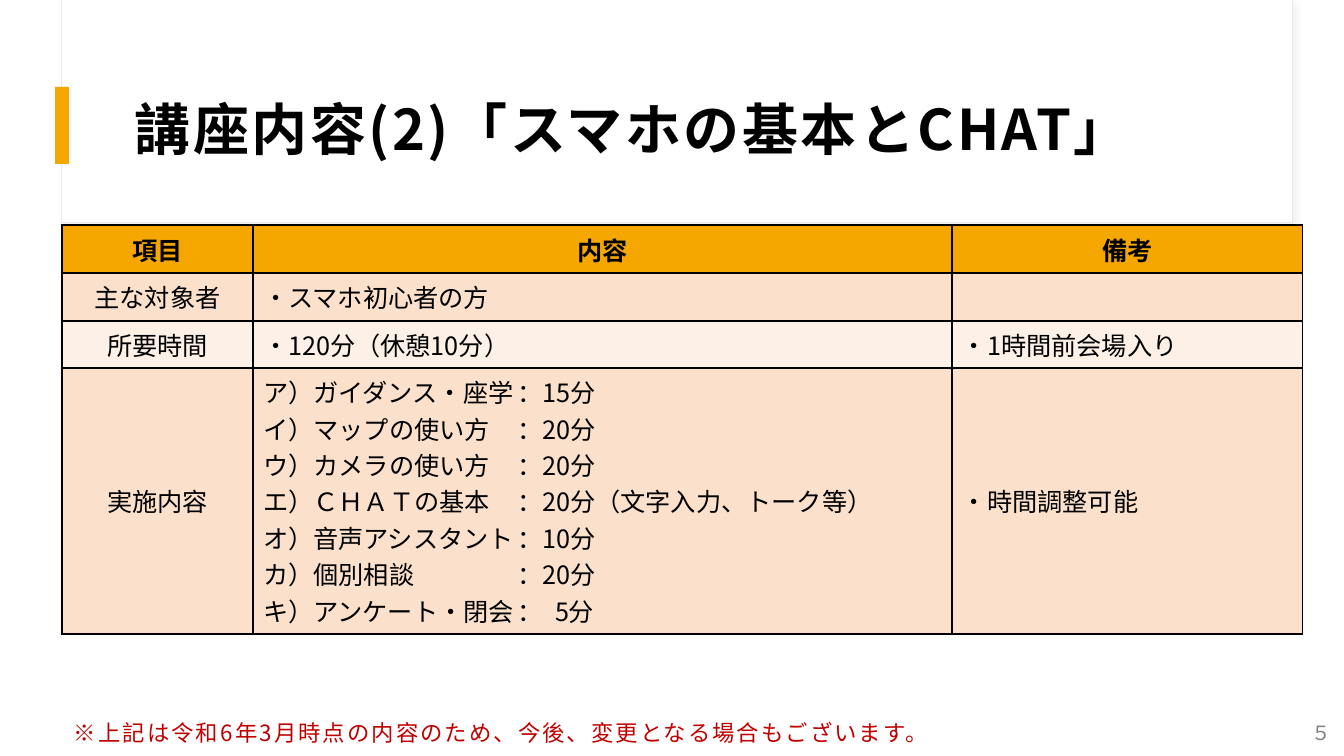
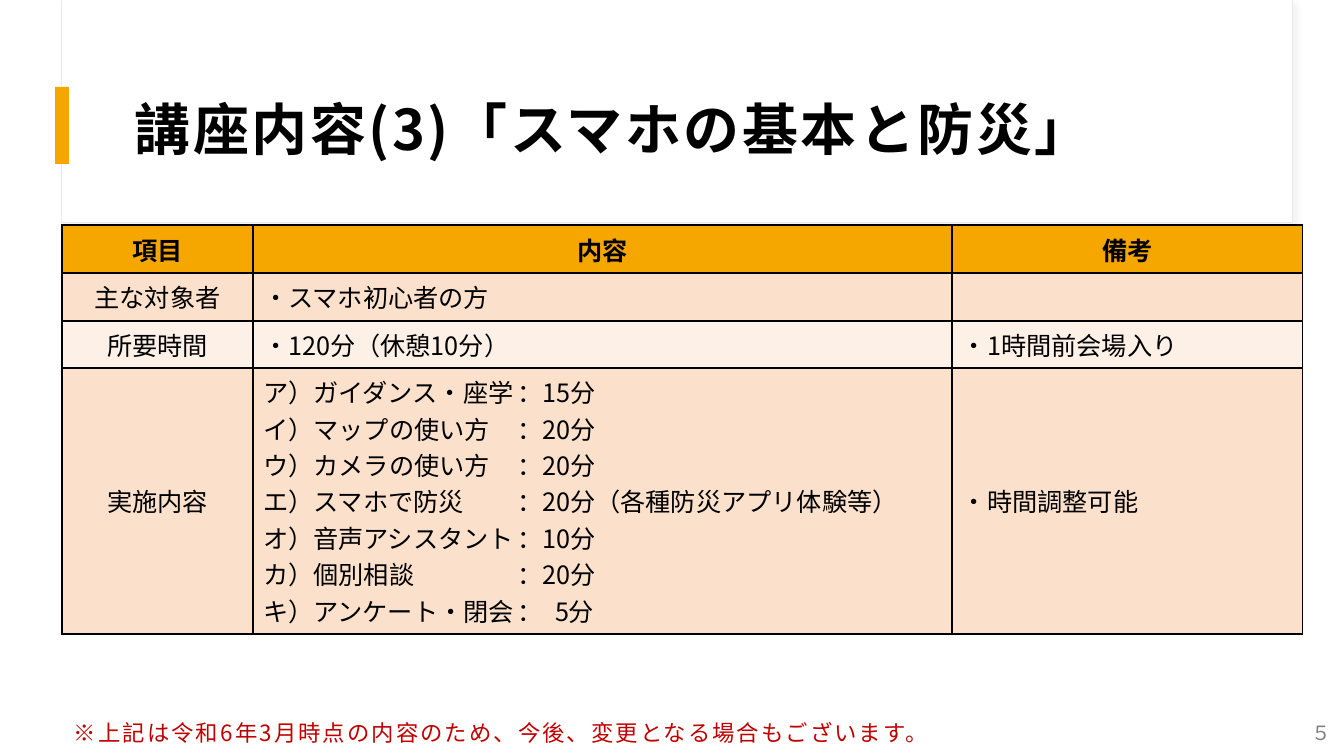
"""Build two course outline slides with a shared title band, table and footer."""
from lxml import etree
from pptx import Presentation
from pptx.dml.color import RGBColor
from pptx.enum.shapes import MSO_SHAPE
from pptx.enum.text import MSO_ANCHOR, PP_ALIGN
from pptx.oxml.ns import qn
from pptx.util import Emu, Pt

RECTANGLE = MSO_SHAPE.RECTANGLE
LEFT, CENTER, RIGHT = PP_ALIGN.LEFT, PP_ALIGN.CENTER, PP_ALIGN.RIGHT
MIDDLE, BOTTOM = MSO_ANCHOR.MIDDLE, MSO_ANCHOR.BOTTOM

FONT = "Noto Sans CJK JP"
COLORS = {
    "white": "FFFFFF",
    "black": "000000",
    "accent": "F5A700",
    "band_dark": "FBE1CC",
    "band_light": "FDF1E7",
    "outline": "E9E9E9",
    "shadow": "D9D9D9",
    "note": "C00000",
    "number": "808080",
}
EMU_PER_PX = 914400 / 100.8
SLIDE_SIZE = (1344, 756)
BOX_INSETS = (12, 12, 12, 10)
COLUMN_WIDTHS = (191, 699, 351)
ROW_HEIGHTS = (48, 48, 47, 266)
ROW_FILLS = ("accent", "band_dark", "band_light", "band_dark")
AGENDA_TABS = (254, 292)

NOTE = "※上記は令和6年3月時点の内容のため、今後、変更となる場合もございます。"
PAGE_NUMBER = "５"
COURSES = (
    ("講座内容(2)「スマホの基本とCHAT」", "エ）ＣＨＡＴの基本\t：20分（文字入力、トーク等）"),
    ("講座内容(3)「スマホの基本と防災」", "エ）スマホで防災\t：20分（各種防災アプリ体験等）"),
)


def px(length):
    return Emu(round(length * EMU_PER_PX))


def course_rows(main_topic):
    agenda = (
        "ア）ガイダンス・座学\t：15分",
        "イ）マップの使い方\t：20分",
        "ウ）カメラの使い方\t：20分",
        main_topic,
        "オ）音声アシスタント\t：10分",
        "カ）個別相談\t：20分",
        "キ）アンケート・閉会\t：\t5分",
    )
    return (
        ("項目", "内容", "備考"),
        ("主な対象者", "・スマホ初心者の方", ""),
        ("所要時間", "・120分（休憩10分）", "・1時間前会場入り"),
        ("実施内容", "\n".join(agenda), "・時間調整可能"),
    )


class CourseDeck:
    def __init__(self):
        self.deck = Presentation()
        self.deck.slide_width, self.deck.slide_height = map(px, SLIDE_SIZE)
        self.page = None

    def color(self, name):
        return RGBColor.from_string(COLORS[name])

    def new_page(self):
        self.page = self.deck.slides.add_slide(self.deck.slide_layouts[6])
        self.rectangle(62, 0, 1231, 223, "white", outline="outline", shadow=True)
        self.rectangle(62, 0, 1230, 222, "white")
        self.rectangle(55, 87, 14, 77, "accent")

    def rectangle(self, left, top, width, height, fill, outline=None, shadow=False):
        shape = self.page.shapes.add_shape(RECTANGLE, px(left), px(top), px(width), px(height))
        shape.fill.solid()
        shape.fill.fore_color.rgb = self.color(fill)
        if outline:
            shape.line.color.rgb = self.color(outline)
            shape.line.width = Pt(0.75)
        else:
            shape.line.fill.background()
        shape.shadow.inherit = False
        if shadow:
            self.soft_shadow(shape)

    def soft_shadow(self, shape):
        effects = shape.element.spPr.find(qn("a:effectLst"))
        outer = etree.SubElement(effects, qn("a:outerShdw"), blurRad=str(Pt(4)),
                                 dist=str(Pt(3)), dir=str(45 * 60000))
        tint = etree.SubElement(outer, qn("a:srgbClr"), val=COLORS["shadow"])
        etree.SubElement(tint, qn("a:alpha"), val="30000")

    def style(self, para, size, color="black", bold=False, align=LEFT, spacing=0):
        para.alignment = align
        for span in para.runs:
            span.font.size = Pt(size)
            span.font.bold = bold
            span.font.name = FONT
            span.font.color.rgb = self.color(color)
            properties = span.font._element
            etree.SubElement(properties, qn("a:ea"), typeface=FONT)
            if spacing:
                properties.set("spc", str(round(spacing * 100)))

    def text(self, left, top, width, height, words, size, anchor=MIDDLE,
             insets=BOX_INSETS, line_spacing=None, **style):
        box = self.page.shapes.add_textbox(px(left), px(top), px(width), px(height))
        frame = box.text_frame
        frame.word_wrap = True
        frame.vertical_anchor = anchor
        (frame.margin_left, frame.margin_top,
         frame.margin_right, frame.margin_bottom) = map(px, insets)
        frame.text = words
        para = frame.paragraphs[0]
        para.line_spacing = line_spacing
        self.style(para, size, **style)

    def title(self, words):
        self.text(123, 60, 1121, 130, words, 40, bold=True, spacing=1.8, line_spacing=1.05)

    def footer(self):
        self.text(62, 672, 1241, 84, NOTE, 16, anchor=BOTTOM, color="note", spacing=1.5)
        self.text(1200, 719, 131, 28, PAGE_NUMBER, 14, insets=(0, 0, 0, 0),
                  color="number", align=RIGHT)

    def table(self, left, top, rows):
        table = self.page.shapes.add_table(
            len(ROW_HEIGHTS), len(COLUMN_WIDTHS), px(left), px(top),
            px(sum(COLUMN_WIDTHS)), px(sum(ROW_HEIGHTS))).table
        for column, width in zip(table.columns, COLUMN_WIDTHS):
            column.width = px(width)
        for row_index, (row, height) in enumerate(zip(table.rows, ROW_HEIGHTS)):
            row.height = px(height)
            for column_index, cell in enumerate(row.cells):
                header = row_index == 0
                align = CENTER if header or column_index == 0 else LEFT
                self.cell(cell, rows[row_index][column_index], ROW_FILLS[row_index], header, align)

    def cell(self, cell, words, fill, bold, align):
        cell.fill.solid()
        cell.fill.fore_color.rgb = self.color(fill)
        cell.vertical_anchor = MIDDLE
        cell.text_frame.text = words
        for para in cell.text_frame.paragraphs:
            self.style(para, 18, bold=bold, align=align)
            if "\t" in para.text:
                self.tab_stops(para)
        self.borders(cell)

    def tab_stops(self, para):
        stops = etree.SubElement(para._p.get_or_add_pPr(), qn("a:tabLst"))
        for position in AGENDA_TABS:
            etree.SubElement(stops, qn("a:tab"), pos=str(px(position)), algn="l")

    def borders(self, cell):
        properties = cell._tc.get_or_add_tcPr()
        for index, side in enumerate(("lnL", "lnR", "lnT", "lnB")):
            border = etree.Element(qn(f"a:{side}"), w=str(Pt(1)))
            paint = etree.SubElement(border, qn("a:solidFill"))
            etree.SubElement(paint, qn("a:srgbClr"), val=COLORS["black"])
            properties.insert(index, border)


def main():
    course_deck = CourseDeck()
    for title, main_topic in COURSES:
        course_deck.new_page()
        course_deck.title(title)
        course_deck.table(62, 225, course_rows(main_topic))
        course_deck.footer()
    course_deck.deck.save("out.pptx")


if __name__ == "__main__":
    main()
